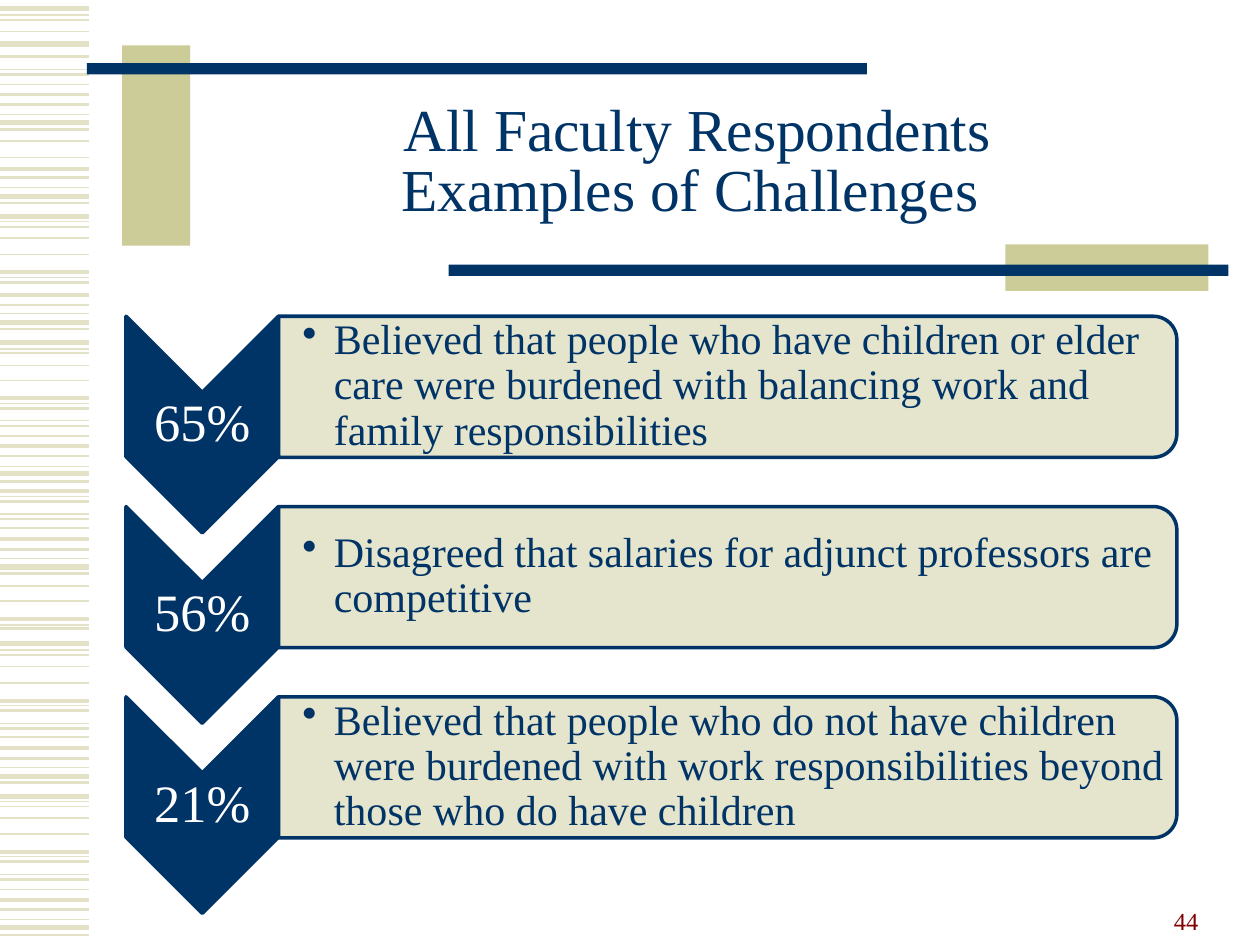
from lxml import etree
from pptx import Presentation
from pptx.dml.color import RGBColor
from pptx.enum.shapes import MSO_CONNECTOR, MSO_SHAPE
from pptx.enum.text import MSO_ANCHOR, PP_ALIGN
from pptx.oxml.ns import qn
from pptx.util import Inches, Pt

RECT = MSO_SHAPE.RECTANGLE
CHEVRON = MSO_SHAPE.CHEVRON
ROUND_TOP = MSO_SHAPE.ROUND_2_SAME_RECTANGLE
STRAIGHT = MSO_CONNECTOR.STRAIGHT
LEFT, CENTER, RIGHT = PP_ALIGN.LEFT, PP_ALIGN.CENTER, PP_ALIGN.RIGHT
MIDDLE, BOTTOM = MSO_ANCHOR.MIDDLE, MSO_ANCHOR.BOTTOM

FONT = "Times New Roman"
NAVY, KHAKI, SAND, WHITE, MAROON = "003366", "CCCC99", "E3E2C7", "FFFFFF", "800000"

TITLE = "All Faculty Respondents\nExamples of Challenges "
PAGE_NUMBER = "44"
CHALLENGES = [
    ("65%", "Believed that people who have children or elder care were burdened "
            "with balancing work and family responsibilities"),
    ("56%", "Disagreed that salaries for adjunct professors are competitive"),
    ("21%", "Believed that people who do not have children were burdened with "
            "work responsibilities beyond those who do have children"),
]

# Line width in points -> heights of the stripes on the left edge
STRIPES = {
    3: [0.07, 0.35, 0.97, 1.56, 1.72, 2.56, 2.72, 3.76, 4.5, 5.11, 6.16, 6.32, 7.36],
    2.25: [0.75, 1.34, 2.16, 2.34, 3.16, 3.54, 3.9, 4.28, 4.91, 5.56, 5.94, 6.76,
           7.14],
    1.5: [0.45, 0.59, 0.83, 1.03, 1.41, 1.61, 2.24, 2.42, 2.61, 3.24, 3.38, 3.62,
          3.82, 3.98, 4.12, 4.36, 4.55, 4.99, 5.64, 5.78, 6.02, 6.21, 6.84, 6.98,
          7.22, 7.42],
    1: [0.16, 0.25, 0.67, 1.12, 1.25, 1.8, 1.89, 2.02, 2.8, 2.9, 3.02, 3.46, 4.19,
        4.65, 4.77, 5.2, 5.29, 5.42, 5.85, 6.4, 6.49, 6.62, 7.06],
    0.75: [0.12, 0.55, 0.91, 1.49, 1.76, 2.2, 2.49, 2.77, 3.2, 3.34, 3.7, 3.94, 4.08,
           4.43, 4.96, 5.16, 5.6, 5.74, 6.09, 6.36, 6.8, 6.94, 7.3],
}
STRIPE_LENGTH = 0.71

BARS = [
    (0.97, 0.36, 0.54, 1.59, KHAKI),
    (0.69, 0.5, 6.19, 0.09, NAVY),
    (7.98, 1.94, 1.61, 0.37, KHAKI),
    (3.56, 2.1, 6.19, 0.09, NAVY),
]

ROW_TOP, ROW_PITCH = 2.51, 1.51
CHEVRON_LEFT, CHEVRON_WIDTH, CHEVRON_HEIGHT = 1.0, 1.21, 1.72
PANEL_LEFT, PANEL_WIDTH, PANEL_HEIGHT = 2.21, 7.13, 1.12

prs = Presentation()
prs.slide_width, prs.slide_height = Inches(10), Inches(7.5)
slide = prs.slides.add_slide(prs.slide_layouts[6])


def rgb(color):
    return RGBColor.from_string(color)


def add_stripe(y, weight):
    stripe = slide.shapes.add_connector(
        STRAIGHT, 0, Inches(y), Inches(STRIPE_LENGTH), Inches(y))
    stripe.line.color.rgb = rgb(SAND)
    stripe.line.width = Pt(weight)
    etree.SubElement(stripe.element.spPr, qn("a:effectLst"))


def add_block(kind, left, top, width, height, fill, outline=None, turned=False,
              opacity=None):
    """Draw a filled shape in the given box; turned means rotated 90 degrees into it."""
    if turned:
        left += (width - height) / 2
        top += (height - width) / 2
        width, height = height, width
    block = slide.shapes.add_shape(
        kind, Inches(left), Inches(top), Inches(width), Inches(height))
    block.rotation = 90 if turned else 0
    block.shadow.inherit = False
    block.fill.solid()
    block.fill.fore_color.rgb = rgb(fill)
    if opacity:
        fill_color = block.element.spPr.find(qn("a:solidFill"))[0]
        etree.SubElement(fill_color, qn("a:alpha"), val=str(opacity * 1000))
    if outline:
        block.line.color.rgb = rgb(outline)
        block.line.width = Pt(2)
    else:
        block.line.fill.background()


def add_text(text, left, top, width, height, size, color, align=LEFT, anchor=MIDDLE,
             spacing=1.0, insets=(0.1, 0.05, 0.1, 0.05), bullet=False):
    box = slide.shapes.add_textbox(
        Inches(left), Inches(top), Inches(width), Inches(height))
    frame = box.text_frame
    frame.word_wrap = True
    frame.vertical_anchor = anchor
    (frame.margin_left, frame.margin_top,
     frame.margin_right, frame.margin_bottom) = map(Inches, insets)
    paragraph = frame.paragraphs[0]
    paragraph.text = text
    paragraph.alignment = align
    paragraph.line_spacing = spacing
    for run in paragraph.runs:
        run.font.name = FONT
        run.font.size = Pt(size)
        run.font.color.rgb = rgb(color)
    if bullet:
        properties = paragraph._p.get_or_add_pPr()
        properties.set("marL", str(Inches(0.25)))
        properties.set("indent", str(-Inches(0.25)))
        etree.SubElement(properties, qn("a:buChar"), char="•")


for weight, heights in STRIPES.items():
    for y in heights:
        add_stripe(y, weight)

for left, top, width, height, color in BARS:
    add_block(RECT, left, top, width, height, color)

add_text(TITLE, 1.5, 0.67, 8.07, 1.25, 34, NAVY, align=CENTER, spacing=0.85)
add_text(PAGE_NUMBER, 7.21, 6.97, 2.4, 0.5, 14, MAROON, align=RIGHT, anchor=BOTTOM)

for row, (share, challenge) in enumerate(CHALLENGES):
    top = ROW_TOP + row * ROW_PITCH
    add_block(CHEVRON, CHEVRON_LEFT, top, CHEVRON_WIDTH, CHEVRON_HEIGHT, NAVY,
              outline=NAVY, turned=True)
    add_text(share, CHEVRON_LEFT, top + 0.6, CHEVRON_WIDTH, 0.52, 30, WHITE,
             align=CENTER, spacing=0.9, insets=(0.02,) * 4)
    add_block(ROUND_TOP, PANEL_LEFT, top, PANEL_WIDTH, PANEL_HEIGHT, SAND,
              outline=NAVY, turned=True, opacity=90)
    add_text(challenge, PANEL_LEFT, top + 0.05, 7.07, 1.01, 24, NAVY, spacing=0.9,
             insets=(0.19, 0.02, 0.02, 0.02), bullet=True)

prs.save("out.pptx")
